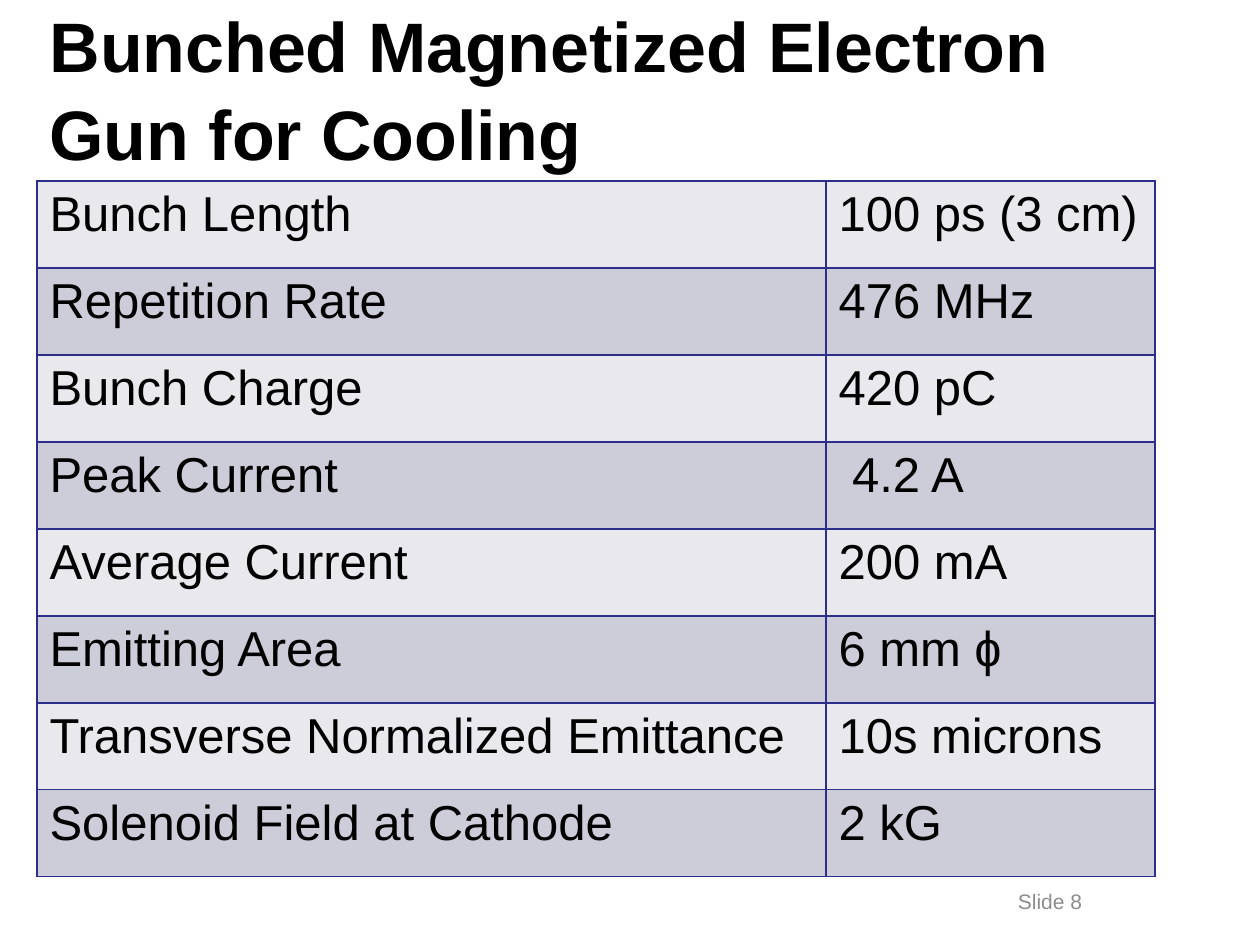
from dataclasses import dataclass
from typing import NamedTuple

from lxml.etree import SubElement
from pptx import Presentation
from pptx.dml.color import RGBColor
from pptx.enum.text import MSO_ANCHOR, MSO_AUTO_SIZE, PP_ALIGN
from pptx.oxml.ns import qn
from pptx.util import Emu, Inches, Pt

PX = Inches(1) / 126


@dataclass(frozen=True)
class Theme:
    font: str = "Arial"
    text: str = "000000"
    muted: str = "8C8C8C"
    border: str = "2D2D8A"
    bands: tuple[str, str] = ("E8E8ED", "CDCDDA")
    title_size: int = 40
    table_size: int = 28
    footer_size: int = 12
    border_width: int = 1


class Box(NamedTuple):
    left: int
    top: int
    width: int
    height: int


class Parameter(NamedTuple):
    name: str
    value: str


THEME = Theme()
TITLE_BOX = Box(37, 1, 1145, 171)
FOOTER_BOX = Box(903, 876, 294, 50)
TABLE_LEFT, TABLE_TOP, ROW_HEIGHT = 37, 181, 87
COLUMN_WIDTHS = (789, 329)
PARAMETERS = [
    Parameter("Bunch Length", "100 ps (3 cm)"),
    Parameter("Repetition Rate", "476 MHz"),
    Parameter("Bunch Charge", "420 pC"),
    Parameter("Peak Current", " 4.2 A"),
    Parameter("Average Current", "200 mA"),
    Parameter("Emitting Area", "6 mm ɸ"),
    Parameter("Transverse Normalized Emittance", "10s microns"),
    Parameter("Solenoid Field at Cathode", "2 kG"),
]


def px(n: int) -> Emu:
    return Emu(round(n * PX))


def write(tf, text: str, size: int, color: str, align=PP_ALIGN.LEFT, bold: bool = False):
    tf.text = text
    p = tf.paragraphs[0]
    p.alignment = align
    p.font.name = THEME.font
    p.font.size = Pt(size)
    p.font.bold = bold
    p.font.color.rgb = RGBColor.from_string(color)
    return p


def set_borders(cell) -> None:
    tc_pr = cell._tc.get_or_add_tcPr()
    for i, side in enumerate(("lnL", "lnR", "lnT", "lnB")):
        ln = tc_pr.makeelement(qn(f"a:{side}"), {"w": str(Pt(THEME.border_width))})
        fill = SubElement(ln, qn("a:solidFill"))
        SubElement(fill, qn("a:srgbClr"), val=THEME.border)
        tc_pr.insert(i, ln)


def add_title(s, text: str, box: Box) -> None:
    sp = s.shapes.title
    sp.left, sp.top, sp.width, sp.height = map(px, box)
    tf = sp.text_frame
    tf.word_wrap = True
    tf.auto_size = MSO_AUTO_SIZE.NONE
    tf.vertical_anchor = MSO_ANCHOR.MIDDLE
    p = write(tf, text, THEME.title_size, THEME.text, bold=True)
    p.line_spacing = 1.05


def add_parameter_table(s, rows: list[Parameter]) -> None:
    box = Box(TABLE_LEFT, TABLE_TOP, sum(COLUMN_WIDTHS), ROW_HEIGHT * len(rows))
    table = s.shapes.add_table(len(rows), len(COLUMN_WIDTHS), *map(px, box)).table
    table.first_row = False
    for column, width in zip(table.columns, COLUMN_WIDTHS):
        column.width = px(width)
    for i, (row, parameter) in enumerate(zip(table.rows, rows)):
        row.height = px(ROW_HEIGHT)
        for cell, text in zip(row.cells, parameter):
            write(cell.text_frame, text, THEME.table_size, THEME.text)
            cell.fill.solid()
            cell.fill.fore_color.rgb = RGBColor.from_string(THEME.bands[i % 2])
            set_borders(cell)


def add_footer(s, text: str, box: Box) -> None:
    tf = s.shapes.add_textbox(*map(px, box)).text_frame
    tf.word_wrap = True
    tf.vertical_anchor = MSO_ANCHOR.MIDDLE
    write(tf, text, THEME.footer_size, THEME.muted, PP_ALIGN.CENTER)


def main() -> None:
    prs = Presentation()
    prs.slide_width, prs.slide_height = px(1260), px(945)
    s = prs.slides.add_slide(prs.slide_layouts[5])
    add_title(s, "Bunched Magnetized Electron Gun for Cooling", TITLE_BOX)
    add_parameter_table(s, PARAMETERS)
    add_footer(s, "Slide 8", FOOTER_BOX)
    prs.save("out.pptx")


if __name__ == "__main__":
    main()
